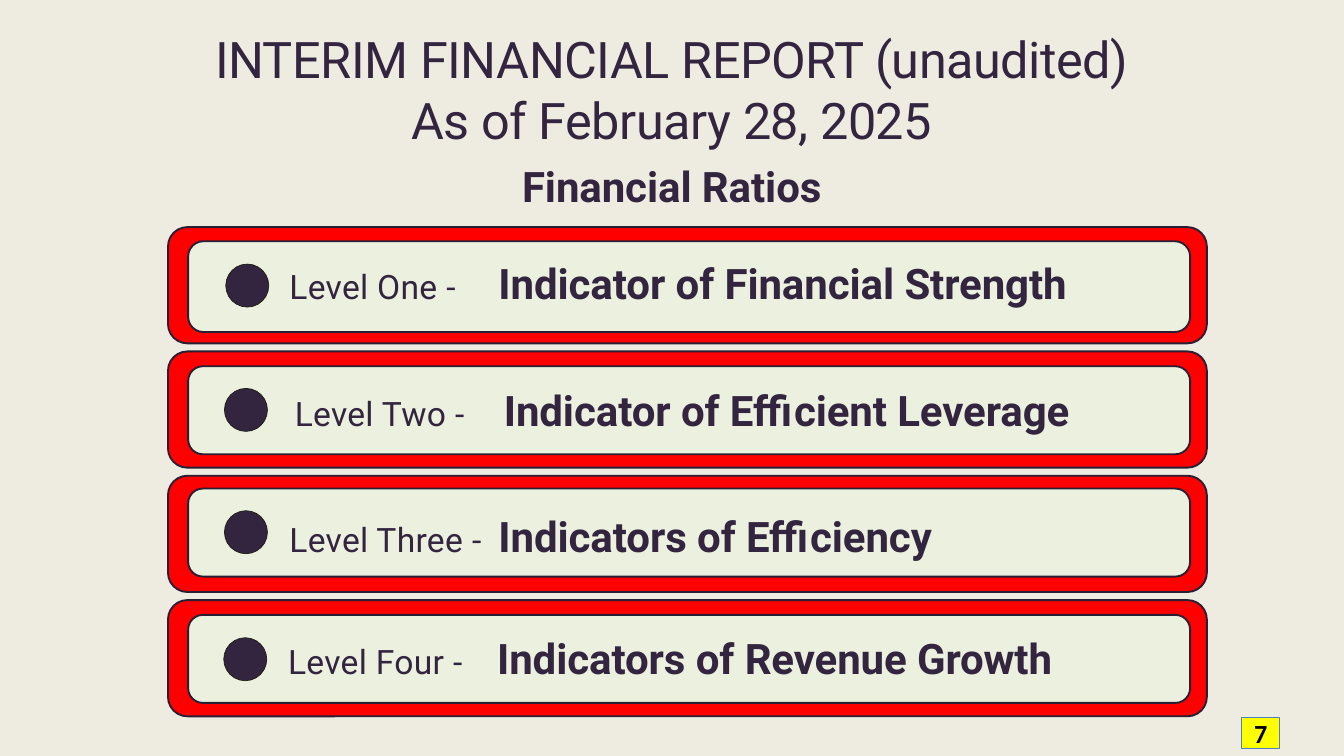
"""Build the slide that lists the four levels of financial ratios."""
from dataclasses import dataclass

from lxml import etree
from pptx import Presentation
from pptx.dml.color import RGBColor
from pptx.enum.shapes import MSO_SHAPE
from pptx.enum.text import MSO_ANCHOR, MSO_AUTO_SIZE, PP_ALIGN
from pptx.oxml.ns import qn
from pptx.shapes.autoshape import Shape
from pptx.slide import Slide
from pptx.util import Inches, Pt

ROUNDED, OVAL, RECTANGLE = MSO_SHAPE.ROUNDED_RECTANGLE, MSO_SHAPE.OVAL, MSO_SHAPE.RECTANGLE
LEFT, CENTER = PP_ALIGN.LEFT, PP_ALIGN.CENTER
TOP = MSO_ANCHOR.TOP
GROW = MSO_AUTO_SIZE.SHAPE_TO_FIT_TEXT

WIDTH, HEIGHT = Inches(20), Inches(11.25)
COLUMNS = 20
CELL = WIDTH / COLUMNS

CREAM, RED, PALE_GREEN, YELLOW = "EEECE1", "FF0000", "EBF1DE", "FFFF00"
PLUM, DARK_PLUM, BROWN, BLUE, BLACK = "332440", "291F35", "1E1C11", "4F81BD", "000000"

FIRST_BAND, BAND_PITCH = 3.38, 1.85
HEADING_TAB = 3.11


@dataclass(frozen=True)
class Box:
    left: float
    top: float
    width: float
    height: float

    def emu(self) -> list[int]:
        """Return the box in slide units, from grid cells."""
        return [round(cells * CELL) for cells in (self.left, self.top, self.width, self.height)]


@dataclass(frozen=True)
class Span:
    text: str
    size: float
    bold: bool = False
    spacing: float = 0
    font: str = "Roboto"
    color: str = PLUM


@dataclass(frozen=True)
class Level:
    label: str
    heading: str
    panel_drop: float
    panel_height: float
    dot_left: float
    dot_drop: float
    text_left: float
    text_drop: float


LEVELS = (
    Level("Level One ", "Indicator of Financial Strength", 0.21, 1.35, 3.36, 0.55, 4.21, 0.41),
    Level("Level Two ", "Indicator of Efficient Leverage", 0.22, 1.31, 3.34, 0.55, 4.29, 0.44),
    Level("Level Three ", "Indicators of Efficiency", 0.19, 1.31, 3.34, 0.52, 4.21, 0.47),
    Level("Level Four ", "Indicators of Revenue Growth", 0.22, 1.31, 3.33, 0.56, 4.19, 0.43),
)


def rgb(color: str) -> RGBColor:
    """Turn a hex string into a colour."""
    return RGBColor.from_string(color)


def draw_shape(slide: Slide, kind: int, box: Box, fill: str, line: str, weight: float) -> Shape:
    """Draw a filled and outlined preset shape."""
    shape = slide.shapes.add_shape(kind, *box.emu())
    shape.shadow.inherit = False
    shape.fill.solid()
    shape.fill.fore_color.rgb = rgb(fill)
    shape.line.color.rgb = rgb(line)
    shape.line.width = Pt(weight)
    return shape


def write(shape: Shape, paragraphs: list[list[Span]], *, align: int = LEFT,
          margins: tuple[float, float] = (0.1, 0.05), before: tuple[float, ...] = (0,),
          tab: float = 0) -> None:
    """Fill a shape with formatted paragraphs."""
    frame = shape.text_frame
    frame.word_wrap = True
    frame.auto_size = GROW
    frame.vertical_anchor = TOP
    frame.margin_left = frame.margin_right = Inches(margins[0])
    frame.margin_top = frame.margin_bottom = Inches(margins[1])
    for index, spans in enumerate(paragraphs):
        paragraph = frame.add_paragraph() if index else frame.paragraphs[0]
        paragraph.alignment = align
        paragraph.space_before = Pt(before[index])
        if tab:
            stops = etree.SubElement(paragraph._p.get_or_add_pPr(), qn("a:tabLst"))
            etree.SubElement(stops, qn("a:tab"), pos=str(round(tab * CELL)), algn="l")
        for span in spans:
            run = paragraph.add_run()
            run.text = span.text
            run.font.name = span.font
            run.font.size = Pt(span.size)
            run.font.bold = span.bold
            run.font.color.rgb = rgb(span.color)
            run._r.get_or_add_rPr().set("spc", str(round(span.spacing * 100)))


def draw_level(slide: Slide, level: Level, row: int) -> None:
    """Draw one band with its panel, dot and wording."""
    top = FIRST_BAND + row * BAND_PITCH
    panel = Box(2.8, top + level.panel_drop, 14.91, level.panel_height)
    draw_shape(slide, ROUNDED, Box(2.5, top, 15.46, 1.73), RED, DARK_PLUM, 2)
    draw_shape(slide, ROUNDED, panel, PALE_GREEN, DARK_PLUM, 2)
    dot = Box(level.dot_left, top + level.dot_drop, 0.64, 0.64)
    draw_shape(slide, OVAL, dot, PLUM, BROWN, 0.75)
    wording = Box(level.text_left, top + level.text_drop, 13.36, 0.86)
    write(slide.shapes.add_textbox(*wording.emu()),
          [[Span(level.label, 36, spacing=0.3), Span("-\t", 36),
            Span(level.heading, 45, bold=True, spacing=-0.1)]],
          before=(5.8,), tab=HEADING_TAB)


def main() -> None:
    """Build and save the presentation."""
    deck = Presentation()
    deck.slide_width, deck.slide_height = WIDTH, HEIGHT
    slide = deck.slides.add_slide(deck.slide_layouts[6])
    slide.background.fill.solid()
    slide.background.fill.fore_color.rgb = rgb(CREAM)

    title = slide.shapes.add_textbox(*Box(2.5, 0.41, 14.99, 2.74).emu())
    write(title,
          [[Span("INTERIM FINANCIAL REPORT (unaudited)", 54, spacing=-0.5)],
           [Span("As of February 28, 2025", 54, spacing=-0.5)],
           [Span("Financial Ratios", 45, bold=True, spacing=-0.1)]],
          align=CENTER, margins=(0, 0.01), before=(1, 0, 12))

    for row, level in enumerate(LEVELS):
        draw_level(slide, level, row)

    page_number = draw_shape(slide, RECTANGLE, Box(18.48, 10.67, 0.56, 0.47), YELLOW, BLUE, 0.75)
    write(page_number, [[Span("7", 28, bold=True, font="Calibri", color=BLACK)]],
          align=CENTER, margins=(0, 0))
    deck.save("out.pptx")


if __name__ == "__main__":
    main()
